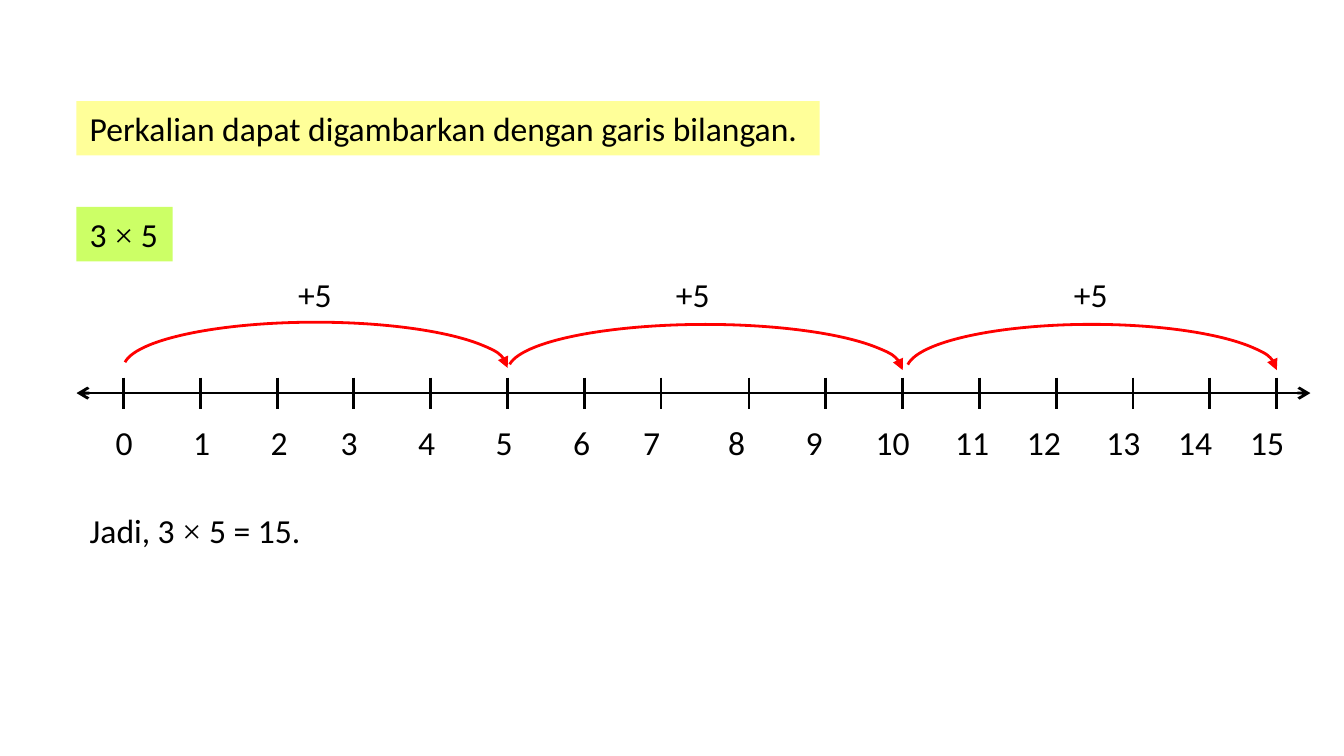
from lxml.etree import SubElement
from pptx import Presentation
from pptx.dml.color import RGBColor
from pptx.enum.shapes import MSO_CONNECTOR, MSO_SHAPE
from pptx.enum.text import MSO_ANCHOR, MSO_AUTO_SIZE, PP_ALIGN
from pptx.oxml.ns import qn
from pptx.util import Pt

BLACK, RED = "000000", "FF0000"
TEXT_HEIGHT = 29.1
LEFT = 41

# Content: text, left, top, width, fill
STATEMENTS = [
    ("Perkalian dapat digambarkan dengan garis bilangan.", LEFT, 54.1, 398.2, "FFFF99"),
    ("3 × 5", LEFT, 110.9, 51.6, "CCFF66"),
]
CONCLUSION = ("Jadi, 3 × 5 = 15.", LEFT, 269.5, 129)

# Jumps: arc left, arc top, arc width, label left
JUMP_LABEL = "+5"
JUMPS = [(66.2, 172.6, 205.8, 152.6), (272.2, 173.8, 211.4, 355), (485.6, 173.8, 198.4, 568.3)]

# Number line: evenly spaced ticks in two runs, then the last one
TICK_STEP = 41.13
TICKS = [66.2 + TICK_STEP * i for i in range(8)]
TICKS += [401.3 + TICK_STEP * i for i in range(7)] + [684]
AXIS_Y, AXIS_END = 210.6, 702
TICK_TOP, TICK_BOTTOM = 202.3, 218.9

# Number labels: the gap before each number, in space widths, sets its tab stop
LABEL_GAPS = [8, 8, 7, 8, 8, 8, 7, 9, 8, 7, 6, 5, 6, 5, 5]
SPACE_WIDTH, DIGIT_WIDTH = 4.05, 9.12


def color(value):
    return RGBColor.from_string(value)


def write(shape, text, tab_stops=()):
    frame = shape.text_frame
    frame.word_wrap = False
    frame.auto_size = MSO_AUTO_SIZE.SHAPE_TO_FIT_TEXT
    frame.vertical_anchor = MSO_ANCHOR.TOP
    paragraph = frame.paragraphs[0]
    paragraph.alignment = PP_ALIGN.LEFT
    if tab_stops:
        tab_list = SubElement(paragraph._p.get_or_add_pPr(), qn("a:tabLst"))
        for stop in tab_stops:
            SubElement(tab_list, qn("a:tab"), pos=str(Pt(stop)), algn="l")
    before, sign, after = text.partition("×")
    for part in filter(None, (before, sign, after)):
        run = paragraph.add_run()
        run.text = part
        run.font.size = Pt(18)
        run.font.name = "Times New Roman" if part == "×" else "Calibri"
        run.font.color.rgb = color(BLACK)


def add_text(shapes, text, left, top, width, tab_stops=()):
    box = shapes.add_textbox(Pt(left), Pt(top), Pt(width), Pt(TEXT_HEIGHT))
    write(box, text, tab_stops)


def style_line(shape, line_color, **arrowheads):
    shape.line.color.rgb = color(line_color)
    shape.line.width = Pt(1.5)
    for end, kind in arrowheads.items():
        SubElement(shape.line._get_or_add_ln(), qn(f"a:{end}"), type=kind)


def add_line(shapes, x1, y1, x2, y2, **arrowheads):
    line = shapes.add_connector(MSO_CONNECTOR.STRAIGHT, Pt(x1), Pt(y1), Pt(x2), Pt(y2))
    style_line(line, BLACK, **arrowheads)
    SubElement(line._element.spPr, qn("a:effectLst"))


presentation = Presentation()
presentation.slide_width, presentation.slide_height = Pt(720), Pt(405)
slide = presentation.slides.add_slide(presentation.slide_layouts[6])

# Highlighted statements
for text, left, top, width, fill in STATEMENTS:
    shape = slide.shapes.add_shape(
        MSO_SHAPE.RECTANGLE, Pt(left), Pt(top), Pt(width), Pt(TEXT_HEIGHT))
    shape.shadow.inherit = False
    shape.fill.solid()
    shape.fill.fore_color.rgb = color(fill)
    shape.line.fill.background()
    write(shape, text)

# Number line with ticks and numbers
number_line = slide.shapes.add_group_shape().shapes
add_line(number_line, LEFT, AXIS_Y, AXIS_END, AXIS_Y, headEnd="arrow", tailEnd="arrow")
for x in TICKS:
    add_line(number_line, x, TICK_TOP, x, TICK_BOTTOM)
tab_stops, position = [], 0
for number, gap in enumerate(LABEL_GAPS):
    position += len(str(number)) * DIGIT_WIDTH + gap * SPACE_WIDTH
    tab_stops.append(position)
numbers = "\t".join(str(number) for number in range(len(TICKS)))
add_text(number_line, numbers, 54.9, 222.5, 654.5, tab_stops)

# Jumps of five
for left, top, width, label_left in JUMPS:
    jump = slide.shapes.add_group_shape().shapes
    arc = jump.add_shape(MSO_SHAPE.ARC, Pt(left), Pt(top), Pt(width), Pt(49))
    arc.adjustments[0], arc.adjustments[1] = 109.024, 0
    arc.shadow.inherit = False
    arc.fill.background()
    style_line(arc, RED, tailEnd="triangle")
    add_text(jump, JUMP_LABEL, label_left, 143.3, 33)

# Conclusion
add_text(slide.shapes, *CONCLUSION)

presentation.save("out.pptx")
